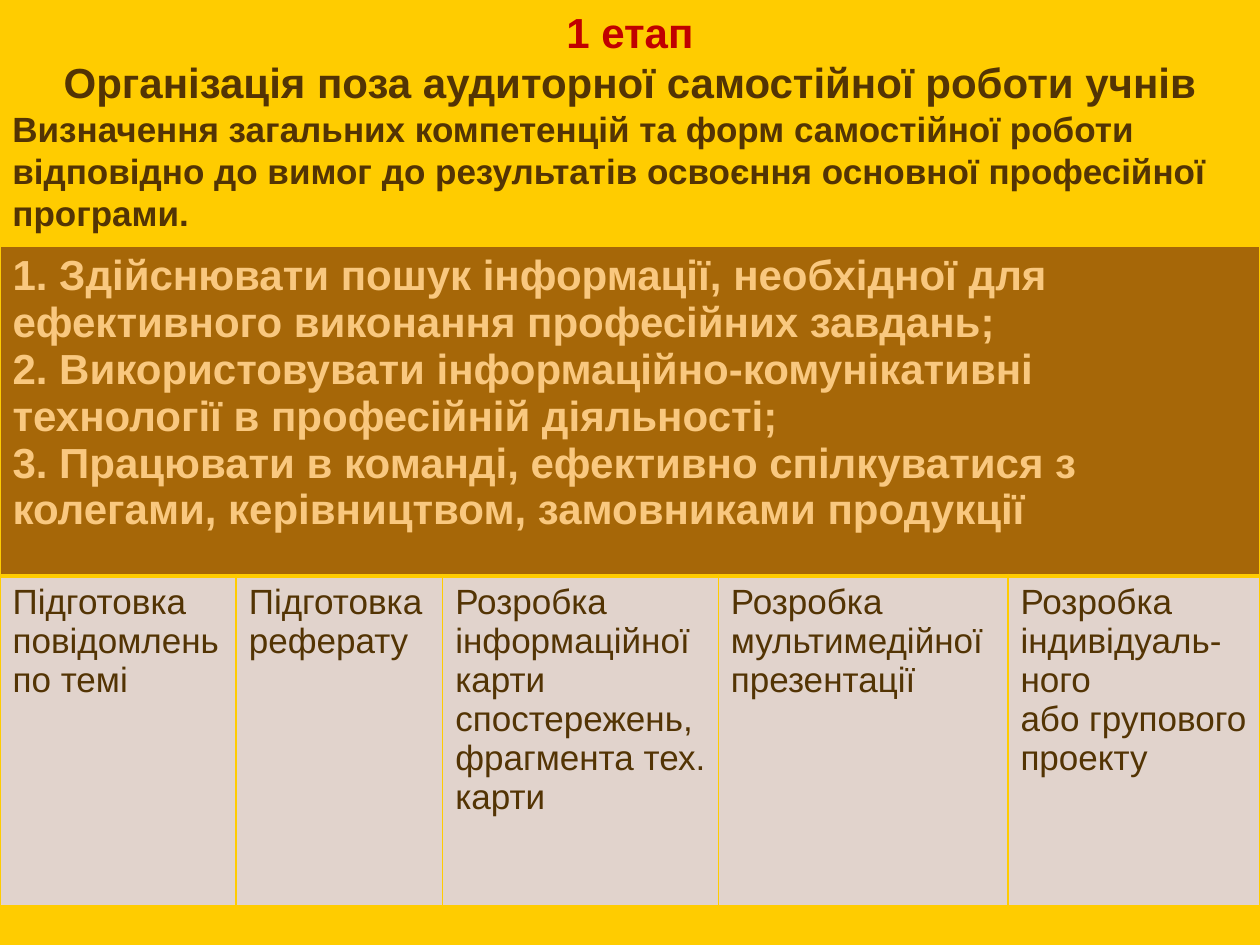
from dataclasses import dataclass

from lxml.etree import SubElement
from pptx import Presentation
from pptx.dml.color import RGBColor
from pptx.enum.text import PP_ALIGN
from pptx.oxml.ns import qn
from pptx.util import Pt


@dataclass(frozen=True)
class Theme:
    font: str = "Arial"
    yellow: str = "FFCC00"
    red: str = "C00000"
    dark_brown: str = "533404"
    brown: str = "A66708"
    peach: str = "F9C87F"
    beige: str = "E1D3CC"
    large: int = 24
    normal: int = 20


THEME = Theme()
COLUMN_WIDTHS = [135, 118, 157.5, 165.5, 144]
ROW_HEIGHT = 188.4

GOALS = [
    "1. Здійснювати пошук інформації, необхідної для ефективного виконання професійних завдань;",
    "2. Використовувати інформаційно-комунікативні технології в професійній діяльності;",
    "3. Працювати в команді, ефективно спілкуватися з колегами, керівництвом, замовниками продукції",
]
WORK_FORMS = [
    ["Підготовка повідомлень по темі"],
    ["Підготовка", "реферату"],
    ["Розробка інформаційної карти спостережень, фрагмента тех. карти"],
    ["Розробка мультимедійної презентації"],
    ["Розробка індивідуаль-", "ного", "або групового", "проекту"],
]


def write_paragraph(text_frame, text, *, size=THEME.normal, color=THEME.dark_brown,
                    bold=False, align=PP_ALIGN.LEFT):
    """Fill the first paragraph if it is still empty, otherwise add one."""
    paragraph = text_frame.paragraphs[-1]
    if paragraph.runs:
        paragraph = text_frame.add_paragraph()
    paragraph.alignment = align
    run = paragraph.add_run()
    run.text = text
    run.font.name = THEME.font
    run.font.size = Pt(size)
    run.font.bold = bold
    run.font.color.rgb = RGBColor.from_string(color)


def add_heading(slide):
    text_frame = slide.shapes.add_textbox(Pt(0), Pt(0), Pt(720), Pt(140)).text_frame
    text_frame.word_wrap = True
    title = {"bold": True, "size": THEME.large, "align": PP_ALIGN.CENTER}
    write_paragraph(text_frame, "1 етап", color=THEME.red, **title)
    write_paragraph(text_frame, "Організація поза аудиторної самостійної роботи учнів", **title)
    write_paragraph(
        text_frame,
        "Визначення загальних компетенцій та форм самостійної роботи відповідно до вимог "
        "до результатів освоєння основної професійної програми.",
        bold=True,
    )


def set_borders(cell, bottom=1):
    properties = cell._tc.get_or_add_tcPr()
    widths = {"a:lnL": 1, "a:lnR": 1, "a:lnT": 1, "a:lnB": bottom}
    for index, (tag, width) in enumerate(widths.items()):
        line = SubElement(properties, qn(tag), w=str(Pt(width)))
        fill = SubElement(line, qn("a:solidFill"))
        SubElement(fill, qn("a:srgbClr"), val=THEME.yellow)
        properties.insert(index, line)


def format_cell(cell, fill, bottom=1):
    cell.fill.solid()
    cell.fill.fore_color.rgb = RGBColor.from_string(fill)
    set_borders(cell, bottom)


def add_work_table(slide):
    table = slide.shapes.add_table(
        2, len(COLUMN_WIDTHS), Pt(0), Pt(140.8), Pt(720), Pt(2 * ROW_HEIGHT)
    ).table
    for column, width in zip(table.columns, COLUMN_WIDTHS):
        column.width = Pt(width)
    for cell in table.rows[0].cells:
        format_cell(cell, THEME.brown, bottom=3)
    goals_cell = table.cell(0, 0)
    goals_cell.merge(table.cell(0, len(COLUMN_WIDTHS) - 1))
    for goal in GOALS:
        write_paragraph(goals_cell.text_frame, goal, size=THEME.large,
                        color=THEME.peach, bold=True)
    for cell, lines in zip(table.rows[1].cells, WORK_FORMS):
        format_cell(cell, THEME.beige)
        for line in lines:
            write_paragraph(cell.text_frame, line)


def main():
    presentation = Presentation()
    presentation.slide_width = Pt(720)
    presentation.slide_height = Pt(540)
    slide = presentation.slides.add_slide(presentation.slide_layouts[6])
    slide.background.fill.solid()
    slide.background.fill.fore_color.rgb = RGBColor.from_string(THEME.yellow)
    add_heading(slide)
    add_work_table(slide)
    presentation.save("out.pptx")


if __name__ == "__main__":
    main()
